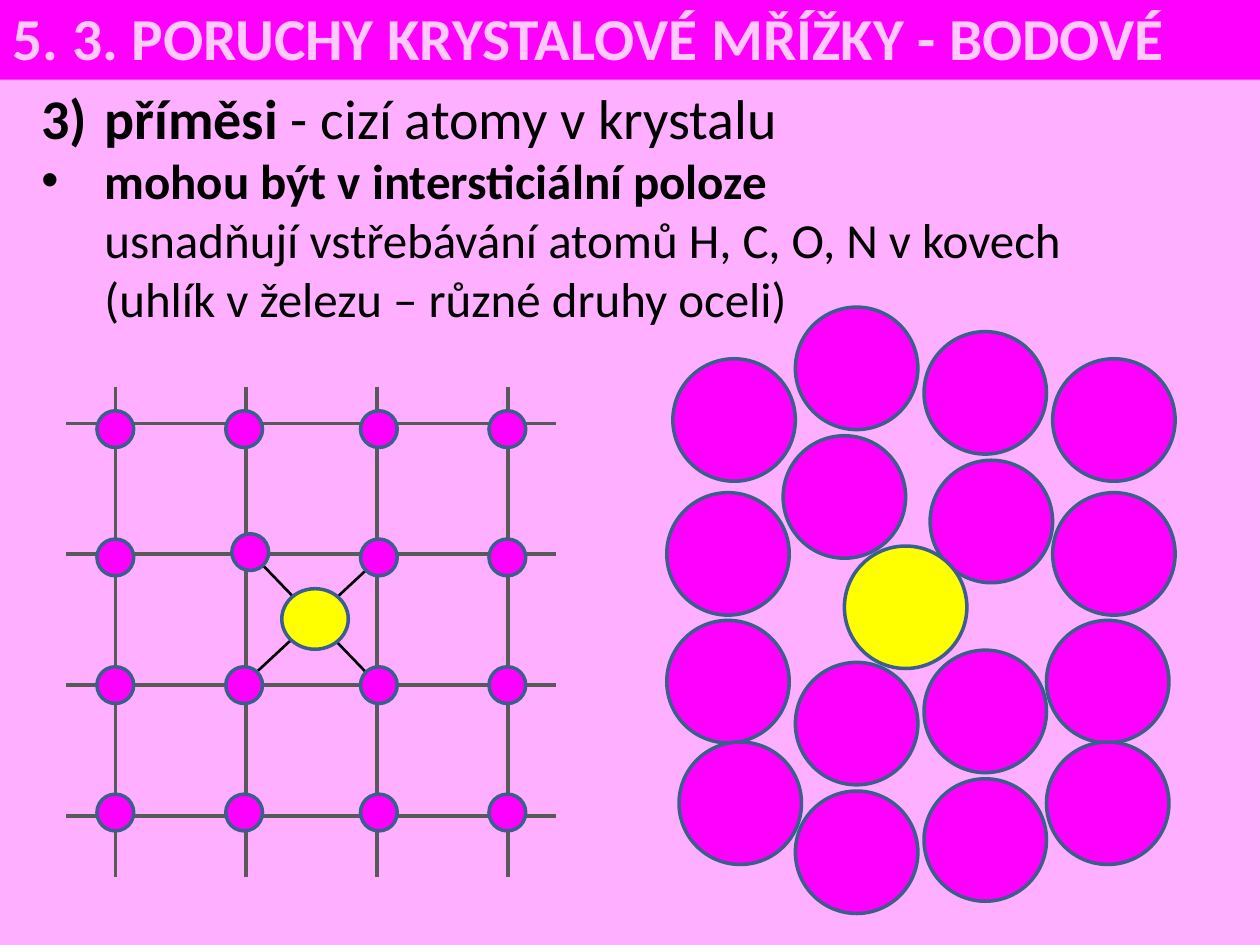
from dataclasses import dataclass

import pptx
import pptx.dml.color
import pptx.enum.shapes
import pptx.enum.text
import pptx.oxml.ns
import pptx.util
from lxml import etree

Pt = pptx.util.Pt
COLORS = {
    "background": "FFAFFF",
    "magenta": "FF00FF",
    "impurity": "FFFF00",
    "outline": "3A5F8C",
    "lattice": "595959",
    "text": "000000",
    "title": "FFC8FF",
}
FONT = "Calibri"


@dataclass(frozen=True)
class Atom:
    left: float
    top: float
    width: float
    height: float
    color: str = "magenta"


@dataclass(frozen=True)
class Bond:
    x1: float
    y1: float
    x2: float
    y2: float
    color: str
    weight: float


@dataclass(frozen=True)
class Item:
    bullet: str
    bullet_attributes: dict[str, str]
    size: float
    lines: list[list[tuple[str, bool]]]


def rgb(name: str) -> pptx.dml.color.RGBColor:
    return pptx.dml.color.RGBColor.from_string(COLORS[name])


def draw_atom(slide, atom: Atom) -> None:
    oval = slide.shapes.add_shape(
        pptx.enum.shapes.MSO_SHAPE.OVAL,
        Pt(atom.left), Pt(atom.top), Pt(atom.width), Pt(atom.height))
    oval.shadow.inherit = False
    oval.fill.solid()
    oval.fill.fore_color.rgb = rgb(atom.color)
    oval.line.color.rgb = rgb("outline")
    oval.line.width = Pt(2)


def draw_bond(slide, bond: Bond) -> None:
    line = slide.shapes.add_connector(
        pptx.enum.shapes.MSO_CONNECTOR.STRAIGHT,
        Pt(bond.x1), Pt(bond.y1), Pt(bond.x2), Pt(bond.y2))
    line.line.color.rgb = rgb(bond.color)
    line.line.width = Pt(bond.weight)
    etree.SubElement(line._element.spPr, pptx.oxml.ns.qn("a:effectLst"))


def place(holder, left: float, top: float, width: float, height: float,
          anchor: pptx.enum.text.MSO_ANCHOR) -> None:
    holder.left, holder.top = Pt(left), Pt(top)
    holder.width, holder.height = Pt(width), Pt(height)
    frame = holder.text_frame
    frame.auto_size = pptx.enum.text.MSO_AUTO_SIZE.NONE
    frame.word_wrap = True
    frame.vertical_anchor = anchor


def style_paragraph(paragraph, size: float, color: str) -> None:
    paragraph.alignment = pptx.enum.text.PP_ALIGN.LEFT
    paragraph.space_before = Pt(0)
    paragraph.font.name = FONT
    paragraph.font.size = Pt(size)
    paragraph.font.color.rgb = rgb(color)


def write_item(paragraph, item: Item) -> None:
    style_paragraph(paragraph, item.size, "text")
    properties = paragraph._p.get_or_add_pPr()
    properties.set("marL", str(Pt(36)))
    properties.set("indent", str(-Pt(36)))
    bullet = etree.Element(pptx.oxml.ns.qn(item.bullet), item.bullet_attributes)
    properties.find(pptx.oxml.ns.qn("a:defRPr")).addprevious(bullet)
    for number, line in enumerate(item.lines):
        if number:
            paragraph.add_line_break()
        for text, bold in line:
            run = paragraph.add_run()
            run.text = text
            run.font.bold = bold


ITEMS = [
    Item("a:buAutoNum", {"type": "arabicParenR", "startAt": "3"}, 32,
         [[("příměsi", True), (" - cizí atomy v krystalu", False)]]),
    Item("a:buChar", {"char": "•"}, 28,
         [[("mohou být v intersticiální poloze ", True)],
          [("usnadňují vstřebávání atomů H, C, O, N v kovech ", False)],
          [("(uhlík v železu – různé druhy oceli)", False)]]),
]

# Lattice: four lines each way, with one node pushed aside by the impurity.
LINE_PITCH = 74.7
LINE_LENGTH = 280
FIRST_COLUMN, FIRST_ROW = 66, 242
LATTICE_LEFT, LATTICE_TOP = 38, 221
NODE_SIZE = 21
NODE_LEFTS = [55.4, 129, 206, 279.4]
NODE_TOPS = [234.7, 308, 381, 453.8]
DISPLACED_NODE = (1, 1)
DISPLACED_POSITION = (132.5, 305)
IMPURITY = Atom(161, 336.4, 38, 34.6, "impurity")
IMPURITY_BONDS = [
    Bond(150.5, 323.3, 208.8, 383.8, "text", 1.5),
    Bond(208.8, 326.2, 146.9, 383.8, "text", 1.5),
]

# Close packing, row by row: left and top of each atom.
PACKED_SIZE = 70
PACKED_POSITIONS = [
    (384.5, 205), (454.5, 175.5), (528, 189.5), (601.5, 205),
    (381, 281.5), (531.5, 263), (601.5, 281.5),
    (381, 354.5), (454.5, 378.5), (528, 371.5), (598, 354.5),
    (447.5, 249),
    (388, 424), (454.5, 452), (528, 445), (598, 424),
]
PACKED_IMPURITY = Atom(482.5, 312, PACKED_SIZE, PACKED_SIZE, "impurity")


def draw_packing(slide) -> None:
    for left, top in PACKED_POSITIONS:
        draw_atom(slide, Atom(left, top, PACKED_SIZE, PACKED_SIZE))
    draw_atom(slide, PACKED_IMPURITY)


def draw_lattice(slide) -> None:
    for index in range(4):
        x = FIRST_COLUMN + index * LINE_PITCH
        y = FIRST_ROW + index * LINE_PITCH
        draw_bond(slide, Bond(LATTICE_LEFT, y, LATTICE_LEFT + LINE_LENGTH, y,
                              "lattice", 2.25))
        draw_bond(slide, Bond(x, LATTICE_TOP, x, LATTICE_TOP + LINE_LENGTH,
                              "lattice", 2.25))
    for row, top in enumerate(NODE_TOPS):
        for column, left in enumerate(NODE_LEFTS):
            displaced = (row, column) == DISPLACED_NODE
            position = DISPLACED_POSITION if displaced else (left, top)
            draw_atom(slide, Atom(*position, NODE_SIZE, NODE_SIZE))
    draw_atom(slide, IMPURITY)


def main() -> None:
    deck = pptx.Presentation()
    deck.slide_width, deck.slide_height = Pt(720), Pt(540)
    slide = deck.slides.add_slide(deck.slide_layouts[1])
    slide.background.fill.solid()
    slide.background.fill.fore_color.rgb = rgb("background")

    title = slide.shapes.title
    place(title, 0, -3, 720, 48.5, pptx.enum.text.MSO_ANCHOR.MIDDLE)
    title.fill.solid()
    title.fill.fore_color.rgb = rgb("magenta")
    title.text_frame.text = "5. 3. PORUCHY KRYSTALOVÉ MŘÍŽKY - BODOVÉ"
    heading = title.text_frame.paragraphs[0]
    style_paragraph(heading, 34, "title")
    heading.font.bold = True

    body = slide.placeholders[1]
    place(body, 16.5, 44, 703.5, 147.5, pptx.enum.text.MSO_ANCHOR.TOP)
    frame = body.text_frame
    for paragraph, item in zip([frame.paragraphs[0], frame.add_paragraph()], ITEMS):
        write_item(paragraph, item)

    for bond in IMPURITY_BONDS:
        draw_bond(slide, bond)
    draw_packing(slide)
    draw_lattice(slide)
    deck.save("out.pptx")


if __name__ == "__main__":
    main()
